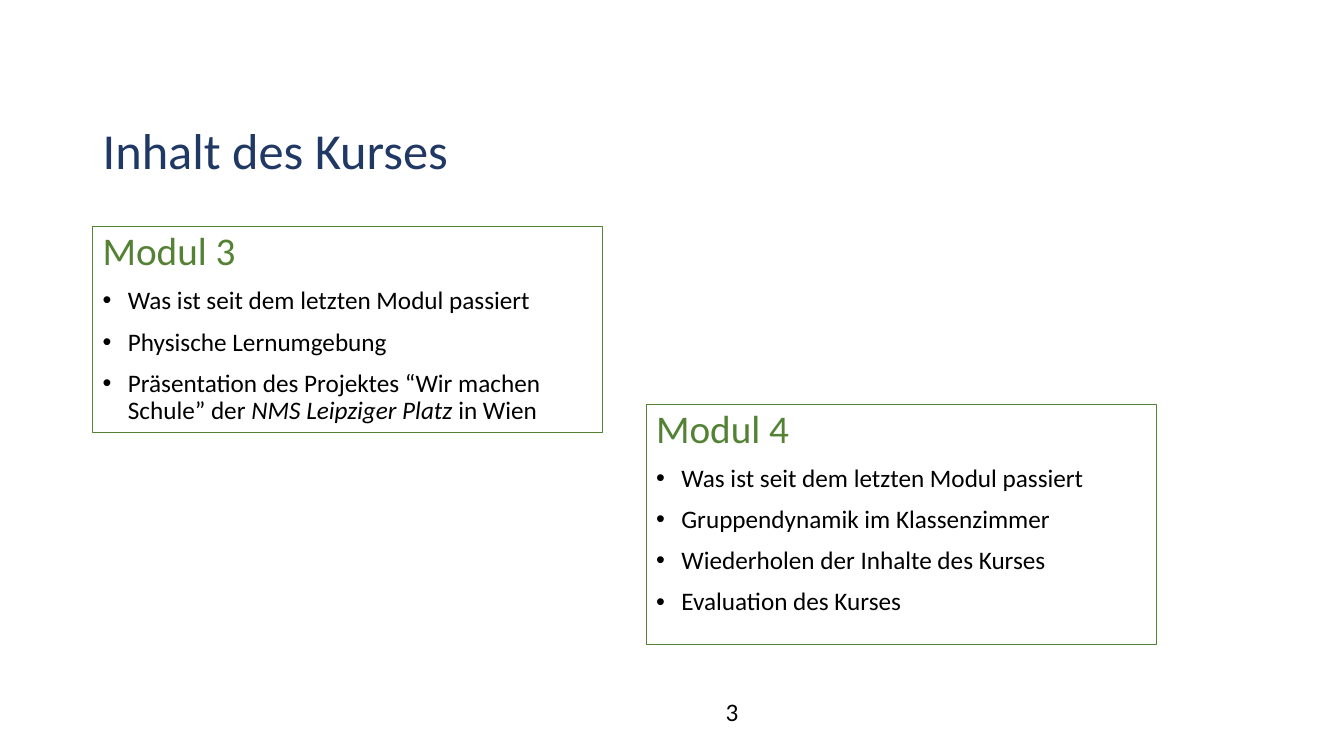
import pptx
import pptx.dml.color
import pptx.enum.text
import pptx.oxml.ns
import pptx.util
from lxml import etree

Inches = pptx.util.Inches
Pt = pptx.util.Pt
Align = pptx.enum.text.PP_ALIGN
Anchor = pptx.enum.text.MSO_ANCHOR

NAVY, GREEN, BLACK = "203864", "548235", "000000"
WIDTH = 5.06
NEWS = [("Was ist seit dem letzten Modul passiert", False)]
MODULES = [
    (0.92, 2.25, 2.04, "Modul 3", [
        NEWS,
        [("Physische Lernumgebung", False)],
        [("Präsentation des Projektes “Wir machen Schule” der ", False),
         ("NMS Leipziger Platz ", True), ("in Wien", False)],
    ]),
    (6.41, 4.01, 2.38, "Modul 4", [
        NEWS,
        [("Gruppendynamik im Klassenzimmer", False)],
        [("Wiederholen der Inhalte des Kurses", False)],
        [("Evaluation des Kurses", False)],
    ]),
]


def color(code):
    return pptx.dml.color.RGBColor.from_string(code)


def style(run, size, code, italic=False):
    font = run.font
    font.name = "Calibri"
    font.size = Pt(size)
    font.italic = italic
    font.color.rgb = color(code)


def add_box(slide, left, top, width, height):
    box = slide.shapes.add_textbox(
        Inches(left), Inches(top), Inches(width), Inches(height))
    box.text_frame.word_wrap = True
    box.text_frame.vertical_anchor = Anchor.TOP
    return box


def add_line(slide, left, top, width, height, text, size, code, align):
    """Place a single line of text in its own box."""
    box = add_box(slide, left, top, width, height)
    para = box.text_frame.paragraphs[0]
    para.text = text
    para.alignment = align
    style(para.runs[0], size, code)
    return para


def add_bullet(para):
    props = para._p.get_or_add_pPr()
    props.set("marL", str(Inches(0.25)))
    props.set("indent", str(-Inches(0.25)))
    qn = pptx.oxml.ns.qn
    etree.SubElement(props, qn("a:buFont")).set("typeface", "Arial")
    etree.SubElement(props, qn("a:buChar")).set("char", "•")


def add_module(slide, left, top, height, title, items):
    """Place a framed heading with its bullet list."""
    box = add_box(slide, left, top, WIDTH, height)
    box.line.color.rgb = color(GREEN)
    box.line.width = Pt(0.75)
    frame = box.text_frame
    head = frame.paragraphs[0]
    head.text = title
    head.line_spacing = 0.9
    style(head.runs[0], 28, GREEN)
    for item in items:
        para = frame.add_paragraph()
        add_bullet(para)
        para.line_spacing = 0.9
        para.space_before = Pt(10)
        for text, italic in item:
            run = para.add_run()
            run.text = text
            style(run, 18, BLACK, italic)


def main():
    deck = pptx.Presentation()
    deck.slide_width = Inches(13.33)
    deck.slide_height = Inches(7.5)
    slide = deck.slides.add_slide(deck.slide_layouts[6])
    title = add_line(slide, 0.92, 1.2, 11.5, 0.97,
                     "Inhalt des Kurses", 36, NAVY, Align.LEFT)
    title.line_spacing = 0.9
    for module in MODULES:
        add_module(slide, *module)
    add_line(slide, 5.76, 6.86, 3, 0.4, "3", 18, BLACK, Align.CENTER)
    deck.save("out.pptx")


if __name__ == "__main__":
    main()
